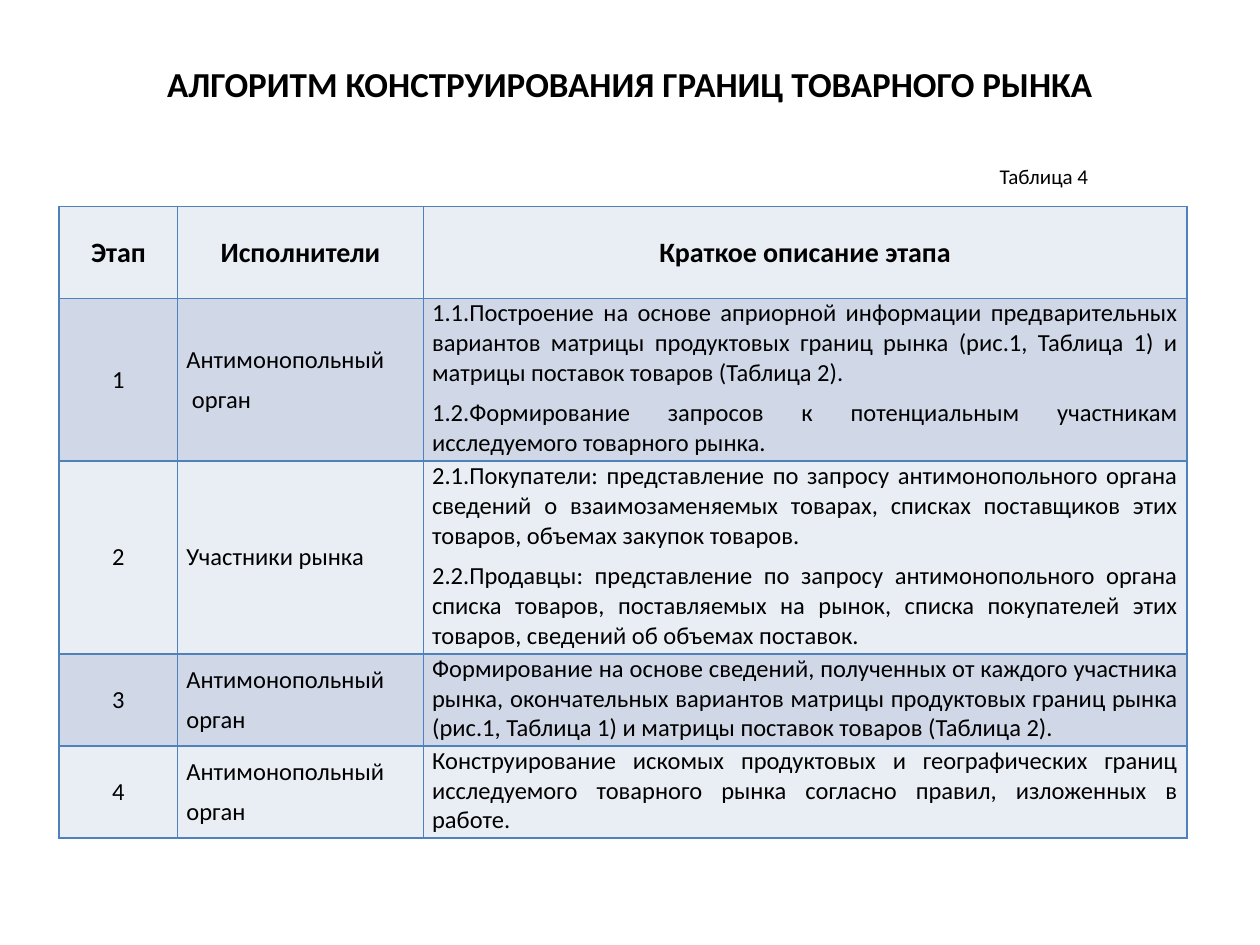
from lxml import etree
from pptx import Presentation
from pptx.dml.color import RGBColor
from pptx.enum.text import MSO_ANCHOR, PP_ALIGN
from pptx.oxml.ns import qn
from pptx.util import Inches, Pt

LEFT, CENTER, JUSTIFY = PP_ALIGN.LEFT, PP_ALIGN.CENTER, PP_ALIGN.JUSTIFY
TOP, MIDDLE = MSO_ANCHOR.TOP, MSO_ANCHOR.MIDDLE

FONT = "Calibri"
BLACK, BORDER = "000000", "4F81BD"
BANDS = ["E9EDF4", "D0D8E8"]

COLUMN_WIDTHS = [0.94, 1.95, 6.06]
ROW_HEIGHTS = [0.73, 1.29, 1.53, 0.73, 0.73]
HEADERS = ["Этап", "Исполнители", "Краткое описание этапа"]
STAGES = [
    ("1", "Антимонопольный\n орган",
     "1.1.Построение на основе априорной информации предварительных вариантов "
     "матрицы продуктовых границ рынка (рис.1, Таблица 1) и матрицы поставок "
     "товаров (Таблица 2).\n"
     "1.2.Формирование запросов к потенциальным участникам исследуемого "
     "товарного рынка."),
    ("2", "Участники рынка",
     "2.1.Покупатели: представление по запросу антимонопольного органа сведений "
     "о взаимозаменяемых товарах, списках поставщиков этих товаров, объемах "
     "закупок товаров.\n"
     "2.2.Продавцы: представление по запросу антимонопольного органа списка "
     "товаров, поставляемых на рынок, списка покупателей этих товаров, сведений "
     "об объемах поставок."),
    ("3", "Антимонопольный\nорган",
     "Формирование на основе сведений, полученных от каждого участника рынка, "
     "окончательных вариантов матрицы продуктовых границ рынка (рис.1, Таблица 1) "
     "и матрицы поставок товаров (Таблица 2)."),
    ("4", "Антимонопольный\nорган",
     "Конструирование искомых продуктовых и географических границ исследуемого "
     "товарного рынка согласно правил, изложенных в работе."),
]


def color(hex_value):
    return RGBColor.from_string(hex_value)


def write_text(frame, text, size, align, bold=False, gap=0):
    """Fill a text frame; each paragraph after the first starts gap points lower."""
    frame.word_wrap = True
    frame.text = text
    for index, para in enumerate(frame.paragraphs):
        para.alignment = align
        para.space_before = Pt(gap if index else 0)
        for span in para.runs:
            span.font.name = FONT
            span.font.size = Pt(size)
            span.font.bold = bold
            span.font.color.rgb = color(BLACK)


def add_text(page, box, text, size, bold=False, anchor=TOP):
    frame = page.shapes.add_textbox(*map(Inches, box)).text_frame
    frame.vertical_anchor = anchor
    write_text(frame, text, size, CENTER, bold)


def add_borders(cell):
    properties = cell._tc.get_or_add_tcPr()
    for index, side in enumerate(("lnL", "lnR", "lnT", "lnB")):
        line = etree.Element(qn(f"a:{side}"), w=str(Pt(1)))
        fill = etree.SubElement(line, qn("a:solidFill"))
        etree.SubElement(fill, qn("a:srgbClr"), val=BORDER)
        properties.insert(index, line)


def style_cell(cell, text, fill, size, align, anchor, bold):
    cell.margin_left = cell.margin_right = Inches(0.07)
    cell.margin_top = cell.margin_bottom = 0
    cell.vertical_anchor = anchor
    cell.fill.solid()
    cell.fill.fore_color.rgb = color(fill)
    add_borders(cell)
    write_text(cell.text_frame, text, size, align, bold, gap=6)


def add_stage_table(page, box):
    rows = [HEADERS, *STAGES]
    table = page.shapes.add_table(
        len(rows), len(HEADERS), *map(Inches, box)).table
    for column, width in zip(table.columns, COLUMN_WIDTHS):
        column.width = Inches(width)
    for row, height in zip(table.rows, ROW_HEIGHTS):
        row.height = Inches(height)

    body_formats = [(CENTER, MIDDLE), (LEFT, MIDDLE), (JUSTIFY, TOP)]
    for row_index, texts in enumerate(rows):
        is_header = row_index == 0
        size = 16 if is_header else 14
        for column_index, text in enumerate(texts):
            align, anchor = (
                (CENTER, MIDDLE) if is_header else body_formats[column_index])
            style_cell(table.cell(row_index, column_index), text,
                       BANDS[row_index % 2], size, align, anchor, is_header)


def main():
    deck = Presentation()
    deck.slide_width, deck.slide_height = Inches(10), Inches(7.5)
    page = deck.slides.add_slide(deck.slide_layouts[6])
    add_text(page, (0.5, 0.3, 9, 0.72),
             "АЛГОРИТМ КОНСТРУИРОВАНИЯ ГРАНИЦ ТОВАРНОГО РЫНКА",
             20, bold=True, anchor=MIDDLE)
    add_stage_table(page, (0.47, 1.64, sum(COLUMN_WIDTHS), sum(ROW_HEIGHTS)))
    add_text(page, (7.19, 1.25, 2.19, 0.3), "Таблица 4", 12)
    deck.save("out.pptx")


if __name__ == "__main__":
    main()
